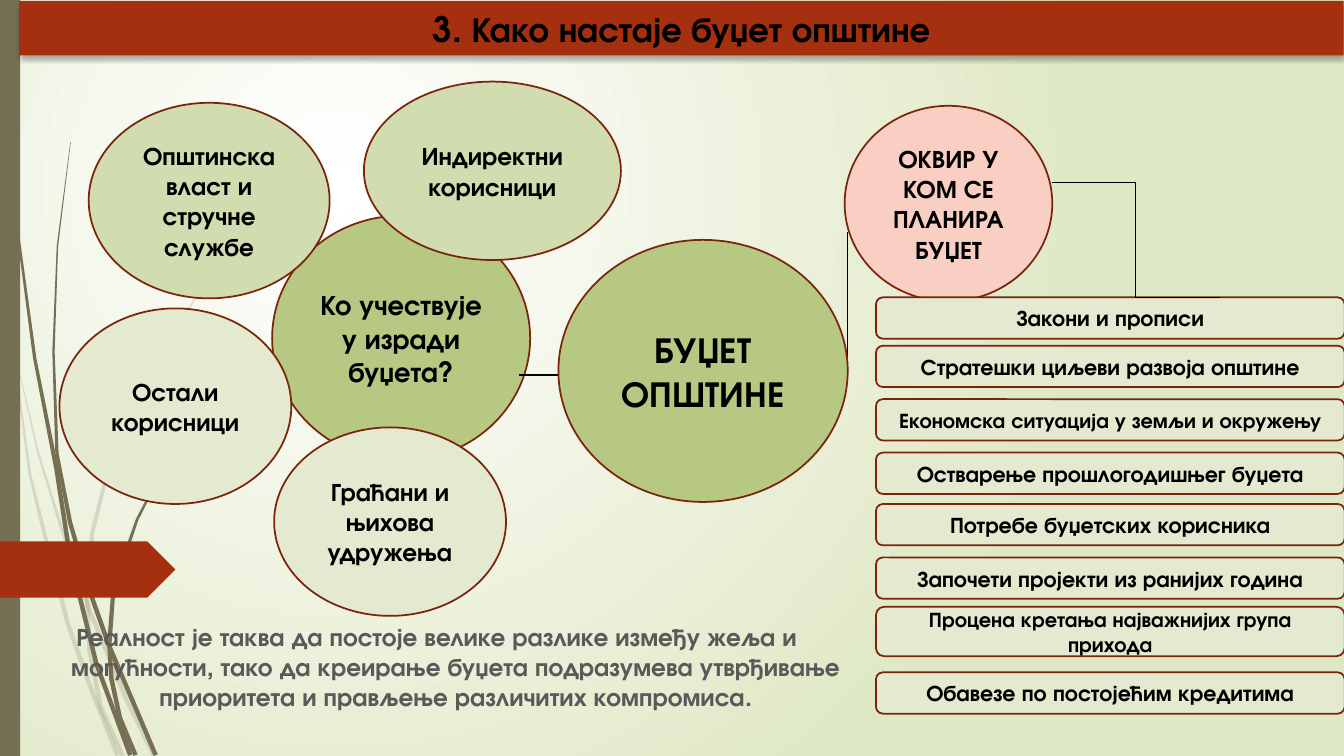
from dataclasses import dataclass
from math import hypot
from lxml.etree import SubElement
from pptx import Presentation
from pptx.dml.color import RGBColor
from pptx.enum.shapes import MSO_CONNECTOR as Link, MSO_SHAPE as Kind
from pptx.enum.text import MSO_ANCHOR as Anchor, PP_ALIGN as Align
from pptx.oxml import parse_xml
from pptx.oxml.ns import nsdecls, qn
from pptx.util import Pt


@dataclass(frozen=True)
class Theme:
    font: str = "TeX Gyre Adventor"
    ink: str = "000000"
    muted: str = "595959"
    rust: str = "A53010"
    outline: str = "7A240C"
    olive: str = "766F54"
    green: str = "B6C882"
    leaf: str = "D1DDB0"
    pale: str = "E3EACF"
    pink: str = "F9CFC3"
    glow: str = "FFFFFF"
    edge: str = "DFE8C4"
    title: float = 25
    hub: float = 26
    question: float = 20
    body: float = 18
    item: float = 16
    small: float = 15


T = Theme()
WIDTH, HEIGHT = 960, 540
TITLE = "3. Како настаје буџет општине"
TITLE_BOX = (13.68, 0.72, 946.08, 38.88)
BODY = ("Реалност је таква да постоје велике разлике између жеља и могућности, "
        "тако да креирање буџета подразумева утврђивање приоритета и прављење "
        "различитих компромиса.")
BODY_BOX = (13.68, 439.92, 596.88, 57.6)
SIDEBAR = (0, 0, 14.4, HEIGHT)
MARKER = (0, 386.64, 125.28, 40.32)

PARTICIPANTS = [
    ("Ко учествује у изради буџета?", (194.4, 154.08, 184.32, 174.96), T.green, T.question),
    ("Општинска власт и стручне службе", (63.36, 73.44, 172.08, 139.68), T.leaf, T.body),
    ("Граћани и њихова удружења", (195.84, 305.28, 165.6, 134.64), T.pale, T.body),
    ("Индиректни корисници", (259.92, 58.32, 183.6, 127.44), T.leaf, T.body),
    ("Остали корисници", (42.48, 220.32, 165.6, 139.68), T.pale, T.body),
]
FRAMEWORK = ("ОКВИР У КОМ СЕ ПЛАНИРА БУЏЕТ", (603.36, 75.6, 148.32, 139.68), T.pink, T.body)
BUDGET = ("БУЏЕТ ОПШТИНЕ", (398.88, 171.36, 206.64, 187.2), T.green, T.hub)

FACTOR_LEFT, FACTOR_WIDTH = 625.68, 334.8
FACTORS = [
    ("Закони и прописи", 212.4, 29.52, T.item),
    ("Стратешки циљеви развоја општине", 246.96, 29.52, T.item),
    ("Економска ситуација у земљи и окружењу", 285.12, 29.52, T.small),
    ("Остварење прошлогодишњег буџета", 323.28, 29.52, T.item),
    ("Потребе буџетских корисника", 360, 29.52, T.item),
    ("Започети пројекти из ранијих година", 398.16, 29.52, T.item),
    ("Процена кретања најважнијих група прихода", 433.44, 35.28, T.small),
    ("Обавезе по постојећим кредитима", 480.24, 29.52, T.item),
]
LINKS = {
    "participants": ((555.12, 247.68, 370.8, 267.84), "bentConnector3"),
    "framework": ((589.68, 267.12, 605.52, 165.6), "bentConnector2"),
    "factors": ((751.68, 130.32, 871.2, 212.4), "bentConnector3"),
}
FADED_STEMS = [
    [(0, 209), (10.8, 260), (21.2, 338), (30, 374), (48.6, 446), (66.2, 495), (84, 540)],
    [(10.8, 252), (27.4, 324), (43.2, 375), (64.8, 438), (90, 499), (109.8, 540)],
    [(224.6, 110.2), (164.5, 176), (114.5, 251), (90, 299), (78, 332), (66, 380),
     (62, 425), (64, 465), (72, 505), (87.5, 540)],
]
STEMS = [
    [(2.5, 0), (5.4, 79), (13, 168), (24.8, 256), (40.3, 335), (50.4, 400),
     (68.8, 474), (93, 539.5)],
    [(50.4, 101.5), (41, 176), (38.2, 251), (40.7, 324), (50, 373), (65.2, 425.5),
     (77.8, 461), (111.2, 539.5)],
    [(187.2, 247.7), (147.2, 292), (113, 342), (98, 371), (89, 397), (80.5, 428),
     (78.1, 460), (79.6, 485), (85.7, 513), (96.8, 539.5)],
]
STEM_WIDTH = 3.2


def rgb(value):
    """Return a colour object."""
    return RGBColor.from_string(value)


def place(sp, box):
    """Move a shape to a box given in points."""
    sp.left, sp.top, sp.width, sp.height = map(Pt, box)


def write(sp, text, size, color=T.ink):
    """Write one centred bold run and return its paragraph."""
    tf = sp.text_frame
    tf.word_wrap = True
    p = tf.paragraphs[0]
    p.alignment = Align.CENTER
    r = p.add_run()
    r.text = text
    r.font.name, r.font.size, r.font.bold = T.font, Pt(size), True
    r.font.color.rgb = rgb(color)
    return p


def paint(sp, fill, line=None):
    """Fill a shape, with or without an outline."""
    sp.shadow.inherit = False
    sp.fill.solid()
    sp.fill.fore_color.rgb = rgb(fill)
    if line:
        sp.line.color.rgb, sp.line.width = rgb(line), Pt(1.25)
    else:
        sp.line.fill.background()


def add_node(s, kind, text, box, fill, size):
    """Add an outlined shape with centred text."""
    sp = s.shapes.add_shape(kind, *map(Pt, box))
    paint(sp, fill, T.outline)
    sp.text_frame.vertical_anchor = Anchor.MIDDLE
    write(sp, text, size)


def add_link(s, ends, preset):
    """Add an elbow connector."""
    c = s.shapes.add_connector(Link.ELBOW, *map(Pt, ends))
    c.line.color.rgb, c.line.width = rgb(T.ink), Pt(0.75)
    pr = c._element.spPr
    pr.find(qn("a:prstGeom")).set("prst", preset)
    SubElement(pr, qn("a:effectLst"))


def add_stem(s, points, alpha=None):
    """Add a grass stem that widens from its tip."""
    last = len(points) - 1
    left, right = [], []
    for i, (x, y) in enumerate(points):
        (x0, y0), (x1, y1) = points[max(i - 1, 0)], points[min(i + 1, last)]
        half = STEM_WIDTH * min(1, 0.1 + 1.5 * i / last) / 2
        reach = half / hypot(x1 - x0, y1 - y0)
        dx, dy = (y1 - y0) * reach, (x0 - x1) * reach
        left.append(((x + dx) * 100, min(y + dy, HEIGHT) * 100))
        right.append(((x - dx) * 100, min(y - dy, HEIGHT) * 100))
    outline = left + right[::-1]
    fb = s.shapes.build_freeform(*outline[0], scale=Pt(1) / 100)
    fb.add_line_segments(outline[1:], close=True)
    sp = fb.convert_to_shape()
    paint(sp, T.olive)
    if alpha:
        clr = sp._element.spPr.find(qn("a:solidFill"))[0]
        SubElement(clr, qn("a:alpha")).set("val", str(alpha * 1000))


def set_background(s):
    """Give the slide a radial gradient."""
    stops = "".join(f'<a:gs pos="{pos}"><a:srgbClr val="{c}"/></a:gs>'
                    for pos, c in ((0, T.glow), (100000, T.edge)))
    s._element.cSld.insert(0, parse_xml(
        f'<p:bg {nsdecls("p", "a")}><p:bgPr><a:gradFill rotWithShape="1"><a:gsLst>{stops}</a:gsLst>'
        '<a:path path="circle"><a:fillToRect l="50000" t="50000" r="100000" b="100000"/></a:path>'
        '</a:gradFill><a:effectLst/></p:bgPr></p:bg>'))


def add_body(s, sp):
    """Set the closing remark in the body placeholder."""
    s.shapes._spTree.append(sp._element)
    place(sp, BODY_BOX)
    p = write(sp, BODY, T.body, T.muted)
    p.space_before = Pt(10)
    pr = p._p.get_or_add_pPr()
    pr.set("marL", str(Pt(27)))
    pr.set("indent", str(-Pt(27)))
    SubElement(pr, qn("a:buNone"))


def add_title(s, sp):
    """Set the title placeholder as a rounded banner."""
    s.shapes._spTree.append(sp._element)
    place(sp, TITLE_BOX)
    pr = sp._element.spPr
    SubElement(SubElement(pr, qn("a:prstGeom"), prst="roundRect"), qn("a:avLst"))
    sp.fill.solid()
    sp.fill.fore_color.rgb = rgb(T.rust)
    pr.append(parse_xml(
        f'<a:effectLst {nsdecls("a")}><a:outerShdw blurRad="{Pt(3.5)}" dist="{Pt(2.2)}" dir="5400000">'
        f'<a:srgbClr val="{T.ink}"><a:alpha val="32000"/></a:srgbClr></a:outerShdw></a:effectLst>'))
    sp.text_frame.vertical_anchor = Anchor.MIDDLE
    write(sp, TITLE, T.title)


def main():
    """Build and save the slide."""
    prs = Presentation()
    prs.slide_width, prs.slide_height = Pt(WIDTH), Pt(HEIGHT)
    s = prs.slides.add_slide(prs.slide_layouts[1])
    set_background(s)
    for points in FADED_STEMS:
        add_stem(s, points, 20)
    for points in STEMS:
        add_stem(s, points)
    for kind, box, fill in ((Kind.RECTANGLE, SIDEBAR, T.olive), (Kind.PENTAGON, MARKER, T.rust)):
        paint(s.shapes.add_shape(kind, *map(Pt, box)), fill)
    add_body(s, s.placeholders[1])
    add_title(s, s.shapes.title)
    for node in PARTICIPANTS:
        add_node(s, Kind.FLOWCHART_CONNECTOR, *node)
    add_link(s, *LINKS["participants"])
    add_node(s, Kind.FLOWCHART_CONNECTOR, *FRAMEWORK)
    add_link(s, *LINKS["framework"])
    for text, top, height, size in FACTORS:
        add_node(s, Kind.ROUNDED_RECTANGLE, text, (FACTOR_LEFT, top, FACTOR_WIDTH, height), T.pale, size)
    add_link(s, *LINKS["factors"])
    add_node(s, Kind.FLOWCHART_CONNECTOR, *BUDGET)
    prs.save("out.pptx")


if __name__ == "__main__":
    main()
